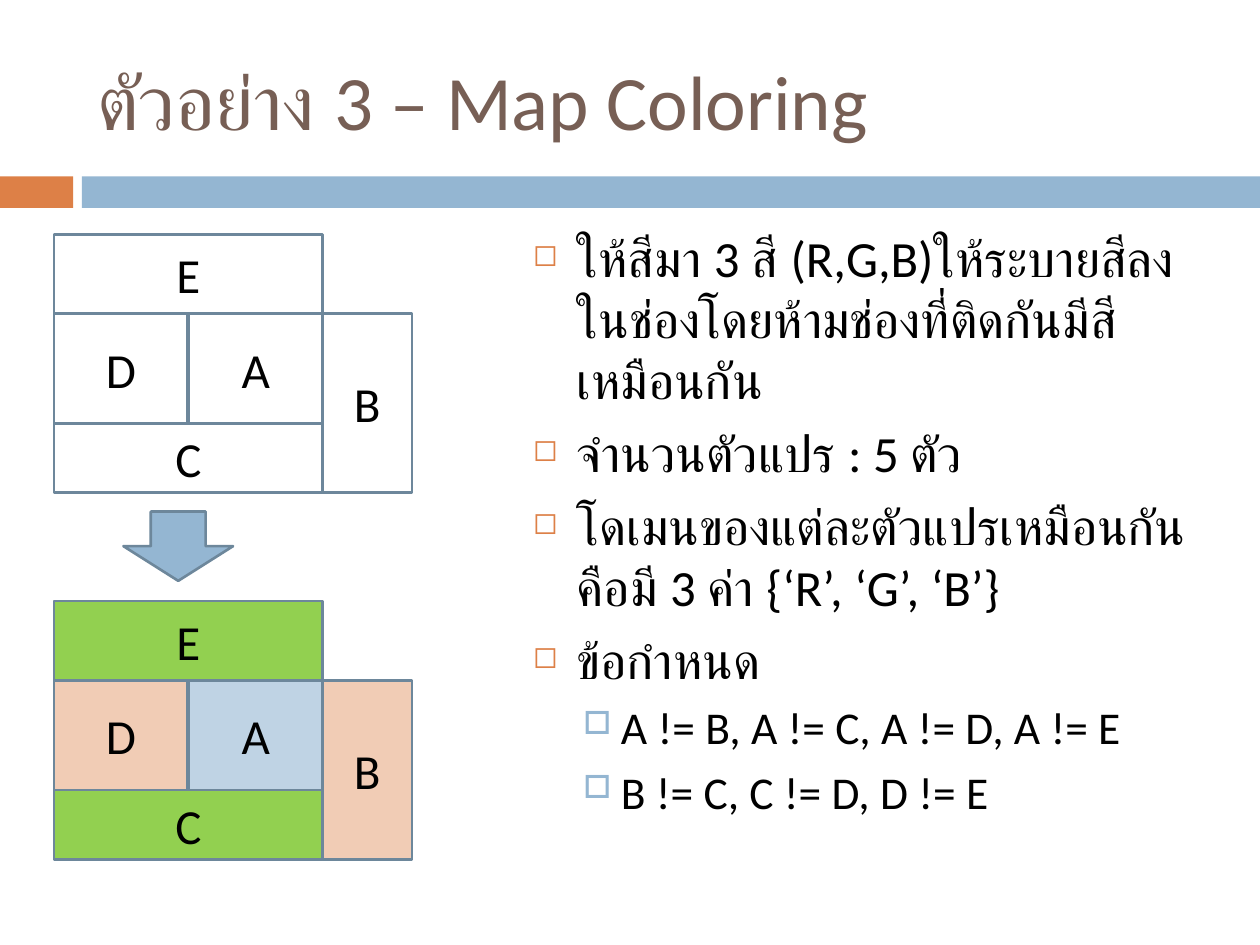
from dataclasses import dataclass

from lxml.etree import SubElement
from pptx import Presentation
from pptx.dml.color import RGBColor
from pptx.enum.shapes import MSO_SHAPE
from pptx.enum.text import MSO_ANCHOR, MSO_AUTO_SIZE, PP_ALIGN
from pptx.oxml.ns import qn
from pptx.util import Inches, Pt


@dataclass(frozen=True)
class Theme:
    font: str = "Calibri"
    title: str = "775F55"
    text: str = "000000"
    orange: str = "DD8047"
    blue: str = "94B6D2"
    outline: str = "6D879B"
    white: str = "FFFFFF"
    green: str = "92D050"
    pale_orange: str = "F1CCB5"
    pale_blue: str = "BFD3E4"
    title_size: float = 44
    body_size: float = 29
    detail_size: float = 26
    region_size: float = 28
    outline_width: float = 1.5


THEME = Theme()

# Region name: left, top, width, height, measured from the map's corner
REGIONS = {
    "E": (0, 0, 2.13, 0.63),
    "D": (0, 0.63, 1.06, 0.87),
    "C": (0, 1.5, 2.13, 0.55),
    "B": (2.13, 0.63, 0.71, 1.42),
    "A": (1.07, 0.63, 1.06, 0.87),
}
BLANK_MAP = dict.fromkeys(REGIONS, THEME.white)
COLOURED_MAP = {
    "E": THEME.green,
    "D": THEME.pale_orange,
    "C": THEME.green,
    "B": THEME.pale_orange,
    "A": THEME.pale_blue,
}

# Formats of the bullet levels
LEVELS = [
    {"size": THEME.body_size, "before": 7, "margin": 0.35, "hanging": 0.35,
     "bullet": "◻", "colour": THEME.orange, "percent": 60},
    {"size": THEME.detail_size, "before": 5.5, "margin": 0.7, "hanging": 0.3,
     "bullet": "□", "colour": THEME.blue, "percent": 70},
]
BULLETS = [
    (0, "ให้สีมา 3 สี (R,G,B)ให้ระบายสีลงในช่องโดยห้ามช่องที่ติดกันมีสีเหมือนกัน"),
    (0, "จำนวนตัวแปร : 5 ตัว"),
    (0, "โดเมนของแต่ละตัวแปรเหมือนกันคือมี 3 ค่า {‘R’, ‘G’, ‘B’}"),
    (0, "ข้อกำหนด"),
    (1, "A != B, A != C, A != D, A != E"),
    (1, "B != C, C != D, D != E"),
]


def write_text(paragraph, text, size, colour=THEME.text):
    run = paragraph.add_run()
    run.text = text
    for name, value in {"name": THEME.font, "size": Pt(size)}.items():
        setattr(run.font, name, value)
    run.font.color.rgb = RGBColor.from_string(colour)


def format_frame(frame, anchor):
    settings = {"word_wrap": True, "auto_size": MSO_AUTO_SIZE.NONE,
                "vertical_anchor": anchor}
    for name, value in settings.items():
        setattr(frame, name, value)


def add_title(slide, text):
    title = slide.shapes.title
    place = {"left": 0.67, "top": 0.25, "width": 8.92, "height": 1.08}
    for name, value in place.items():
        setattr(title, name, Inches(value))
    format_frame(title.text_frame, MSO_ANCHOR.MIDDLE)
    paragraph = title.text_frame.paragraphs[0]
    paragraph.alignment = PP_ALIGN.LEFT
    write_text(paragraph, text, THEME.title_size, THEME.title)


def add_filled_shape(slide, kind, box, fill, outlined=True):
    shape = slide.shapes.add_shape(kind, *map(Inches, box))
    shape.shadow.inherit = False
    shape.fill.solid()
    shape.fill.fore_color.rgb = RGBColor.from_string(fill)
    if outlined:
        shape.line.color.rgb = RGBColor.from_string(THEME.outline)
        shape.line.width = Pt(THEME.outline_width)
    else:
        shape.line.fill.background()
    return shape


def add_map(slide, left, top, colours):
    for name, (across, down, width, height) in REGIONS.items():
        box = (left + across, top + down, width, height)
        shape = add_filled_shape(slide, MSO_SHAPE.RECTANGLE, box, colours[name])
        format_frame(shape.text_frame, MSO_ANCHOR.MIDDLE)
        paragraph = shape.text_frame.paragraphs[0]
        paragraph.alignment = PP_ALIGN.CENTER
        write_text(paragraph, name, THEME.region_size)


def set_bullet(paragraph, level):
    properties = paragraph._p.get_or_add_pPr()
    properties.set("marL", str(Inches(level["margin"])))
    properties.set("indent", str(-Inches(level["hanging"])))
    colour = SubElement(properties, qn("a:buClr"))
    SubElement(colour, qn("a:srgbClr"), val=level["colour"])
    SubElement(properties, qn("a:buSzPct"), val=str(level["percent"] * 1000))
    SubElement(properties, qn("a:buChar"), char=level["bullet"])


def add_bullets(slide, box, bullets):
    frame = slide.shapes.add_textbox(*map(Inches, box)).text_frame
    format_frame(frame, MSO_ANCHOR.TOP)
    for index, (depth, text) in enumerate(bullets):
        paragraph = frame.add_paragraph() if index else frame.paragraphs[0]
        level = LEVELS[depth]
        paragraph.level = depth
        paragraph.space_before = Pt(level["before"])
        set_bullet(paragraph, level)
        write_text(paragraph, text, level["size"])


def main():
    presentation = Presentation()
    presentation.slide_width = Inches(10)
    presentation.slide_height = Inches(7.5)
    slide = presentation.slides.add_slide(presentation.slide_layouts[5])

    for left, width, fill in ((0, 0.58, THEME.orange), (0.65, 9.35, THEME.blue)):
        add_filled_shape(slide, MSO_SHAPE.RECTANGLE, (left, 1.4, width, 0.25),
                         fill, outlined=False)
    add_title(slide, "ตัวอย่าง 3 – Map Coloring")
    add_bullets(slide, (4.13, 1.75, 5.45, 4.92), BULLETS)
    add_map(slide, 0.43, 1.86, BLANK_MAP)
    add_map(slide, 0.43, 4.77, COLOURED_MAP)
    add_filled_shape(slide, MSO_SHAPE.DOWN_ARROW, (0.98, 4.06, 0.87, 0.55), THEME.blue)
    presentation.save("out.pptx")


if __name__ == "__main__":
    main()
